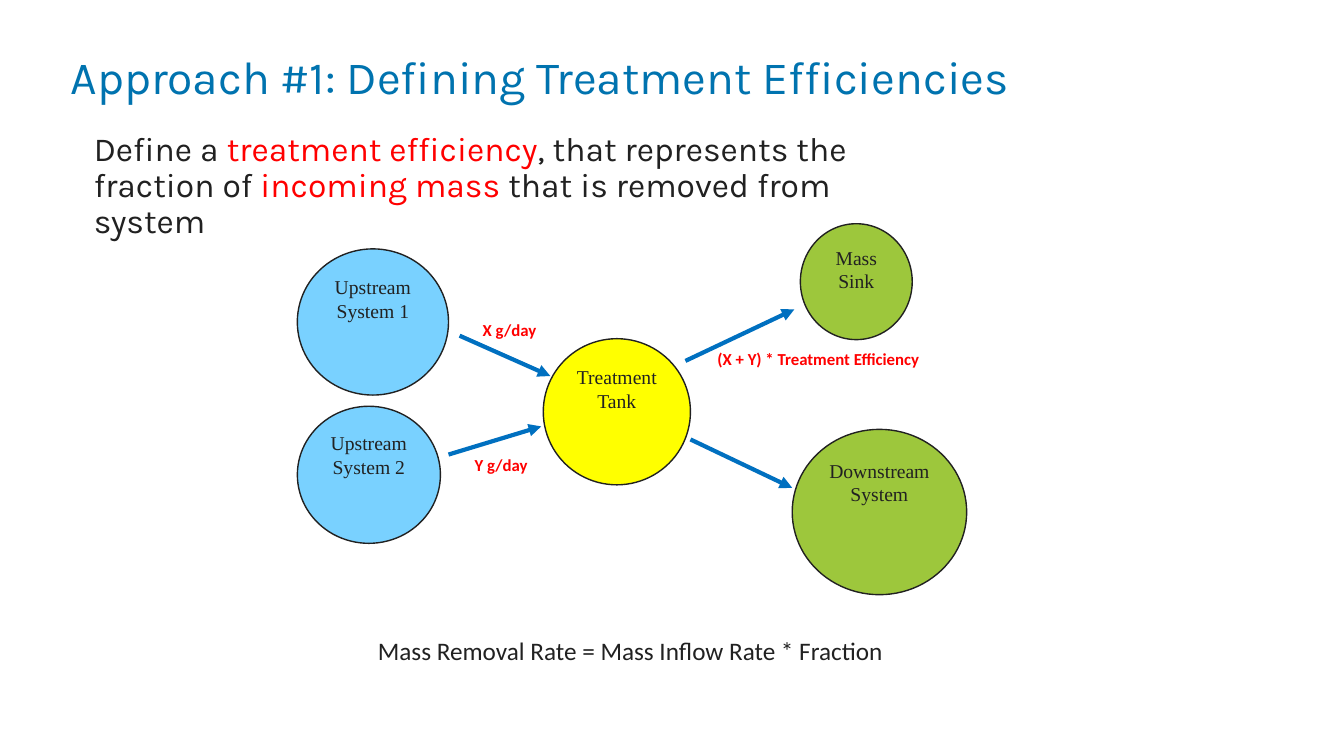
import pptx
import pptx.util
import pptx.dml.color
import pptx.enum.shapes
import pptx.enum.text
import lxml.etree

Pt = pptx.util.Pt
Anchor = pptx.enum.text.MSO_ANCHOR
Align = pptx.enum.text.PP_ALIGN

INK, RED, BLUE = "212121", "FF0000", "0070C0"
SKY, YELLOW, GREEN = "79D1FF", "FFFF00", "9DC73C"


def color(code):
    return pptx.dml.color.RGBColor.from_string(code)


class Board:
    """Holds the slide and the style of its parts."""

    head_font, text_font, node_font = "Karla", "Calibri", "Times New Roman"

    def __init__(self, deck):
        self.slide = deck.slides.add_slide(deck.slide_layouts[5])
        self.shapes = self.slide.shapes

    def style(self, para, name, size, code=None, bold=False):
        para.font.name, para.font.size, para.font.bold = name, Pt(size), bold
        if code:
            para.font.color.rgb = color(code)

    def frame(self, shape, anchor, side=7.2, edge=3.6):
        frame = shape.text_frame
        frame.word_wrap = True
        frame.auto_size = pptx.enum.text.MSO_AUTO_SIZE.NONE
        frame.vertical_anchor = anchor
        frame.margin_left = frame.margin_right = Pt(side)
        frame.margin_top = frame.margin_bottom = Pt(edge)
        return frame

    def title(self, text, box):
        shape = self.shapes.title
        shape.left, shape.top, shape.width, shape.height = map(Pt, box)
        frame = self.frame(shape, Anchor.MIDDLE, 0, 0)
        frame.text = text
        para = frame.paragraphs[0]
        para.alignment, para.line_spacing = Align.LEFT, 0.9
        self.style(para, self.head_font, 33, "0073AF")

    def lead(self, parts, box):
        frame = self.frame(self.shapes.add_textbox(*map(Pt, box)), Anchor.TOP, 0, 0)
        para = frame.paragraphs[0]
        para.line_spacing = 0.9
        self.style(para, self.head_font, 24)
        for text, code in parts:
            run = para.add_run()
            run.text = text
            run.font.color.rgb = color(code)

    def label(self, text, box, size=12, code=RED, bold=True, anchor=Anchor.MIDDLE):
        frame = self.frame(self.shapes.add_textbox(*map(Pt, box)), anchor)
        frame.text = text
        self.style(frame.paragraphs[0], self.text_font, size, code, bold)

    def node(self, text, box, fill):
        kind = pptx.enum.shapes.MSO_SHAPE.OVAL
        shape = self.shapes.add_shape(kind, *map(Pt, box))
        shape.shadow.inherit = False
        shape.fill.solid()
        shape.fill.fore_color.rgb = color(fill)
        shape.line.color.rgb = color(INK)
        shape.line.width = Pt(1)
        frame = self.frame(shape, Anchor.TOP)
        frame.text = text
        para = frame.paragraphs[0]
        para.alignment = Align.CENTER
        self.style(para, self.node_font, 14, INK)

    def arrow(self, ends):
        kind = pptx.enum.shapes.MSO_CONNECTOR.STRAIGHT
        link = self.shapes.add_connector(kind, *map(Pt, ends))
        link.line.color.rgb = color(BLUE)
        link.line.width = Pt(3)
        space = "{http://schemas.openxmlformats.org/drawingml/2006/main}"
        props = link.line._get_or_add_ln()
        lxml.etree.SubElement(props, space + "tailEnd", type="triangle")
        lxml.etree.SubElement(props.getparent(), space + "effectLst")


def main():
    deck = pptx.Presentation()
    deck.slide_width, deck.slide_height = Pt(960), Pt(540)
    board = Board(deck)

    # Heading and lead text
    board.title("Approach #1: Defining Treatment Efficiencies", (50.4, 23.8, 728, 66.2))
    board.lead([
        ("Define a ", INK),
        ("treatment efficiency", RED),
        (", that represents the fraction of ", INK),
        ("incoming mass ", RED),
        ("that is removed from system", INK),
    ], (67, 94.3, 594, 80))

    # Systems
    for text, box, fill in [
        ("Upstream System 1", (212.4, 177.8, 108, 104.4), SKY),
        ("Upstream System 2", (212.4, 290.2, 102.2, 97.9), SKY),
        ("Treatment Tank", (388.1, 241.9, 105.1, 104.4), YELLOW),
        ("Mass Sink", (571.7, 159.8, 79.9, 82.8), GREEN),
        ("Downstream System", (565.9, 306.7, 124.6, 118.1), GREEN),
    ]:
        board.node(text, box, fill)

    # Flows
    for ends in [
        (328.3, 239.8, 393.1, 268.6),
        (320.4, 324.7, 386.6, 304.6),
        (489.6, 257.8, 567.4, 221),
        (493.2, 313.9, 565.9, 348.5),
    ]:
        board.arrow(ends)

    # Flow labels
    for text, box in [
        ("X g/day", (337.7, 217.4, 80, 36)),
        ("Y g/day", (331.9, 313.9, 80, 36)),
        ("(X + Y) * Treatment Efficiency", (505.4, 238.3, 160.6, 36)),
    ]:
        board.label(text, box)

    # Formula
    board.label("Mass Removal Rate = Mass Inflow Rate * Fraction",
                (262.8, 450, 394.6, 51), 18, INK, False, Anchor.TOP)

    deck.save("out.pptx")


if __name__ == "__main__":
    main()
